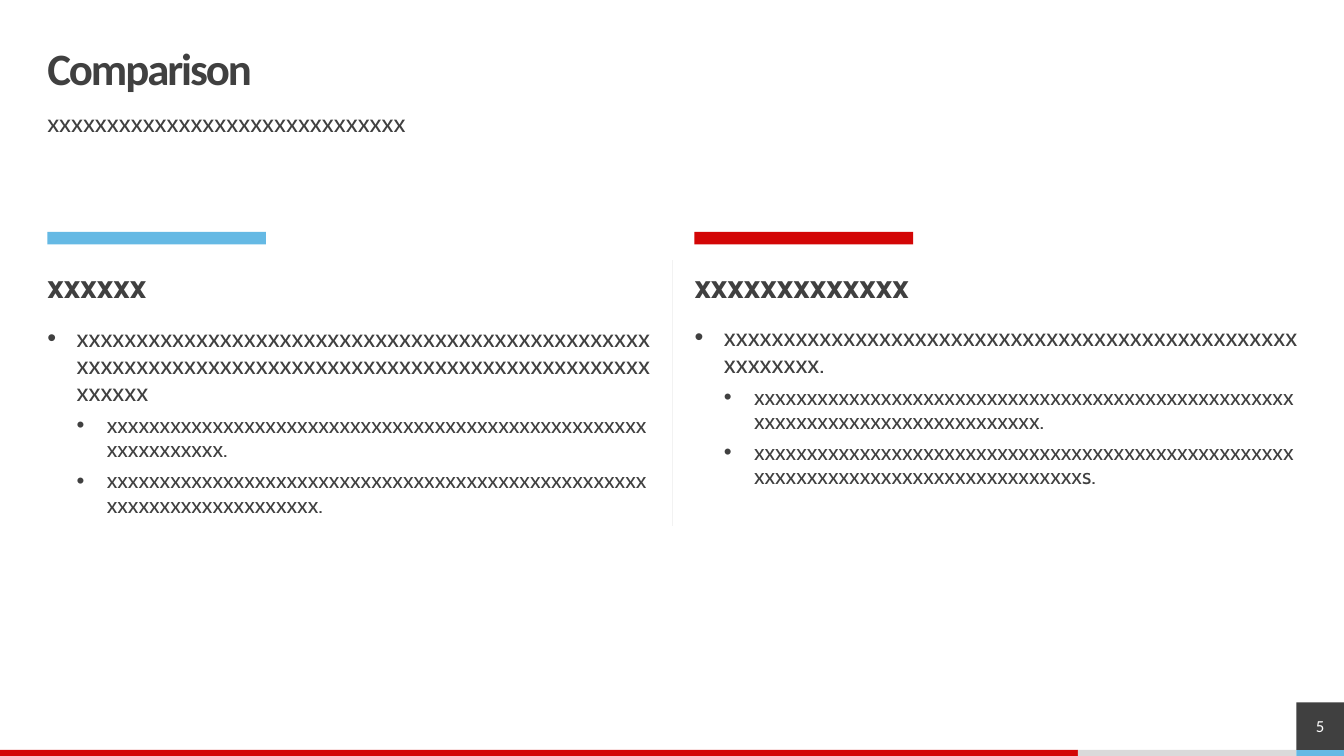
from pptx import Presentation
from pptx.dml.color import RGBColor
from pptx.enum.shapes import MSO_CONNECTOR as Connector, MSO_SHAPE as Shape
from pptx.enum.text import MSO_ANCHOR as Anchor, MSO_AUTO_SIZE as AutoSize, PP_ALIGN as Align
from pptx.oxml.ns import qn
from pptx.util import Pt
from lxml.etree import SubElement

DARK, RED, BLUE, GREY, PALE, WHITE = "404040", "D30606", "65B9E4", "DADADA", "F2F2F2", "FFFFFF"
MARGIN, COLUMN_WIDTH, CONTENT_WIDTH = 33.8, 430.6, 892.8
FOOTER_TOP, FOOTER_HEIGHT, TAB_LEFT, TAB_SIZE = 535.7, 4.3, 926, 34

COLUMNS = [
    (MARGIN, 232.6, BLUE, "xxxxxx", [
        "xxxxxxxxxxxxxxxxxxxxxxxxxxxxxxxxxxxxxxxxxxxxxxxxxxxxxxxxxxxxxxxxxxxxxxxxxxxxxxxxxxxxxxxxxxxxxxxxxxxxxx",
        "xxxxxxxxxxxxxxxxxxxxxxxxxxxxxxxxxxxxxxxxxxxxxxxxxxxxxxxxxxxxxx.",
        "xxxxxxxxxxxxxxxxxxxxxxxxxxxxxxxxxxxxxxxxxxxxxxxxxxxxxxxxxxxxxxxxxxxxxxx.",
    ]),
    (496.1, 231.8, RED, "xxxxxxxxxxxxx", [
        "xxxxxxxxxxxxxxxxxxxxxxxxxxxxxxxxxxxxxxxxxxxxxxxxxxxxxxxx.",
        "xxxxxxxxxxxxxxxxxxxxxxxxxxxxxxxxxxxxxxxxxxxxxxxxxxxxxxxxxxxxxxxxxxxxxxxxxxxxxx.",
        "xxxxxxxxxxxxxxxxxxxxxxxxxxxxxxxxxxxxxxxxxxxxxxxxxxxxxxxxxxxxxxxxxxxxxxxxxxxxxxxxxxs.",
    ]),
]


def color(hex_code):
    return RGBColor.from_string(hex_code)


def write(paragraph, text, size=18, font="Cabin", hue=DARK, bold=False, align=Align.LEFT,
          line=0.9, before=0, tracking=0, level=0, indent=None):
    paragraph.level = level
    paragraph.alignment = align
    paragraph.line_spacing = line
    paragraph.space_before = Pt(before)
    paragraph.space_after = Pt(0)
    if indent:
        left, hanging = indent
        properties = paragraph._p.get_or_add_pPr()
        properties.set("marL", str(Pt(left)))
        properties.set("indent", str(-Pt(hanging)))
        SubElement(properties, qn("a:buFont"), typeface="Arial")
        SubElement(properties, qn("a:buChar"), char="•")
    run = paragraph.add_run()
    run.text = text
    run.font.size, run.font.name, run.font.bold = Pt(size), font, bold
    run.font.color.rgb = color(hue)
    if tracking:
        run._r.get_or_add_rPr().set("spc", str(round(tracking * 100)))


class ComparisonSlide:
    """Holds the deck style and the current slide, and draws each kind of element."""

    def __init__(self, deck):
        self.slide = deck.slides.add_slide(deck.slide_layouts.get_by_name("Comparison"))
        self.shapes = self.slide.shapes

    def frame(self, shape, anchor=Anchor.TOP):
        frame = shape.text_frame
        frame.margin_left = frame.margin_top = frame.margin_right = frame.margin_bottom = 0
        frame.word_wrap = True
        frame.auto_size = AutoSize.NONE
        frame.vertical_anchor = anchor
        return frame

    def placeholder(self, index, left, top, width, height, anchor=Anchor.TOP):
        holder = next(p for p in self.slide.placeholders if p.placeholder_format.idx == index)
        holder.left, holder.top, holder.width, holder.height = map(Pt, (left, top, width, height))
        return self.frame(holder, anchor)

    def textbox(self, left, top, width, height):
        return self.frame(self.shapes.add_textbox(*map(Pt, (left, top, width, height))))

    def bar(self, left, top, width, height, hue):
        bar = self.shapes.add_shape(Shape.RECTANGLE, *map(Pt, (left, top, width, height)))
        bar.shadow.inherit = False
        bar.fill.solid()
        bar.fill.fore_color.rgb = color(hue)
        bar.line.fill.background()
        return bar

    def divider(self, x, top, bottom):
        divider = self.shapes.add_connector(Connector.STRAIGHT, *map(Pt, (x, top, x, bottom)))
        divider.line.color.rgb = color(PALE)
        divider.line.width = Pt(0.5)
        SubElement(divider._element.spPr, qn("a:effectLst"))

    def bullets(self, frame, items):
        for number, item in enumerate(items):
            if number == 0:
                write(frame.paragraphs[0], item, indent=(21, 21))
            else:
                write(frame.add_paragraph(), item, size=16, before=5, level=1, indent=(42.5, 21.5))


def main():
    deck = Presentation()
    deck.slide_width, deck.slide_height = Pt(960), Pt(540)
    page = ComparisonSlide(deck)

    for left, right, hue in [(0, 770, RED), (770, TAB_LEFT, GREY), (TAB_LEFT, 960, BLUE)]:
        page.bar(left, FOOTER_TOP, right - left, FOOTER_HEIGHT, hue)

    title = page.placeholder(0, MARGIN, 33.8, CONTENT_WIDTH, 33.8, Anchor.MIDDLE)
    write(title.paragraphs[0], "Comparison", size=32, font="Calibri", bold=True, tracking=-1.5)
    subtitle = page.textbox(MARGIN, 79.2, CONTENT_WIDTH, 28)
    write(subtitle.paragraphs[0], "xxxxxxxxxxxxxxxxxxxxxxxxxxxxxx")

    for number, (left, list_top, hue, heading, items) in enumerate(COLUMNS):
        page.bar(left, 165.6, 156.2, 9, hue)
        heading_frame = page.placeholder(1 + 2 * number, left, 192.2, COLUMN_WIDTH, 28)
        write(heading_frame.paragraphs[0], heading, size=24, bold=True)
        page.bullets(page.placeholder(2 + 2 * number, left, list_top, COLUMN_WIDTH, 172.8), items)

    page.divider(480, 185.8, 375.8)

    page_tab = page.bar(TAB_LEFT, FOOTER_TOP - TAB_SIZE, TAB_SIZE, TAB_SIZE, DARK)
    page_number = page.frame(page_tab, Anchor.MIDDLE).paragraphs[0]
    write(page_number, "5", size=12, font="Calibri", hue=WHITE, align=Align.CENTER, line=1.0)

    deck.save("out.pptx")


if __name__ == "__main__":
    main()
